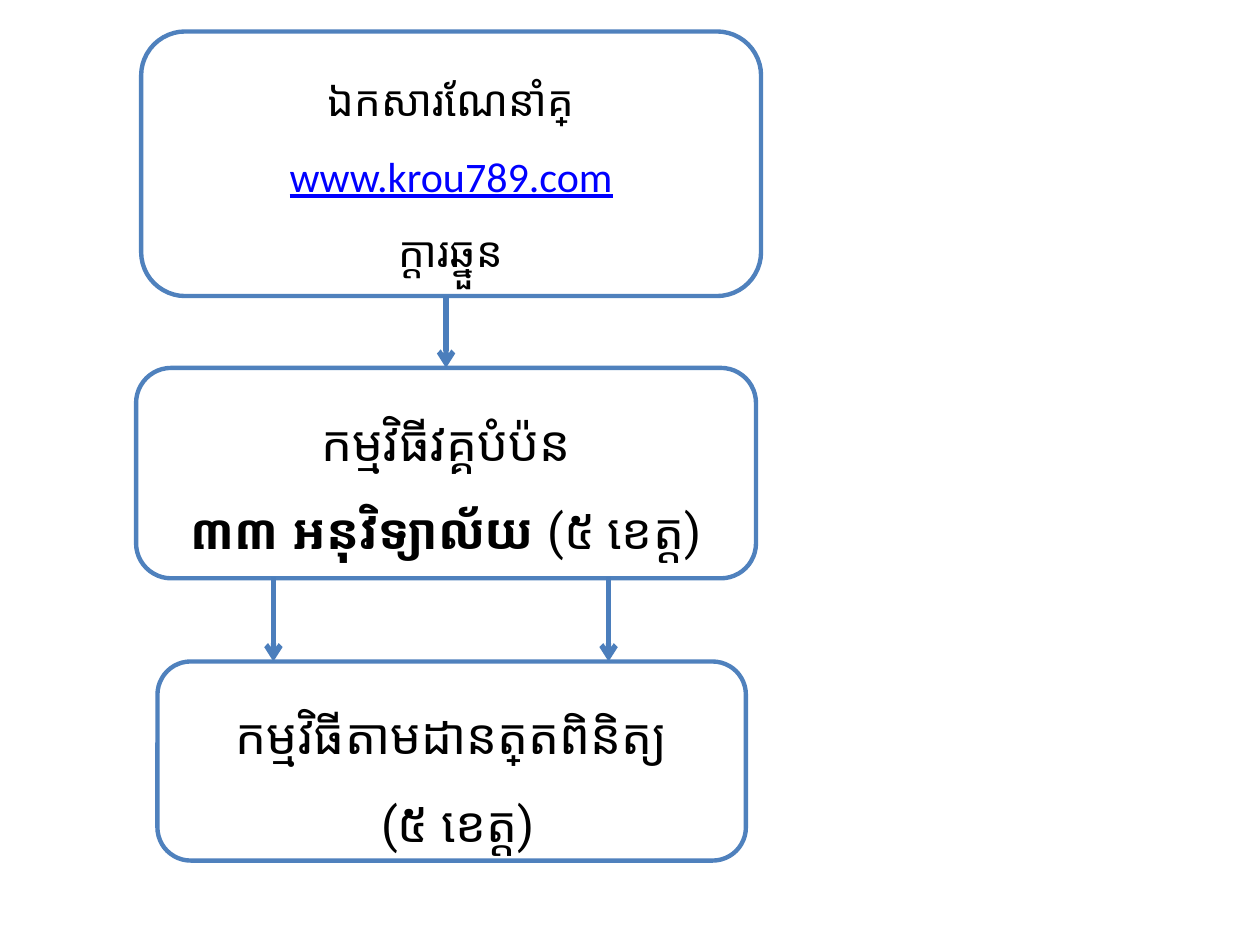
from dataclasses import dataclass

from lxml import etree
from pptx import Presentation
from pptx.dml.color import RGBColor
from pptx.enum.shapes import MSO_CONNECTOR, MSO_SHAPE
from pptx.enum.text import MSO_ANCHOR, PP_ALIGN
from pptx.oxml.ns import qn
from pptx.slide import Slide
from pptx.util import Inches, Pt

WHITE = RGBColor(0xFF, 0xFF, 0xFF)
BLACK = RGBColor(0x00, 0x00, 0x00)
BORDER_BLUE = RGBColor(0x4F, 0x81, 0xBD)
ARROW_BLUE = RGBColor(0x4B, 0x7E, 0xBC)
LINK_BLUE = RGBColor(0x00, 0x00, 0xFF)

BOLD = "bold"
LINK = "link"


@dataclass
class Flowchart:
    slide: Slide
    border_width: float = 2.5
    arrow_width: float = 3
    inset: float = 0.04
    line_spacing: float = 1.5

    def step(self, left, top, width, height, font_name, size, lines):
        """Draw a rounded box; each line is a list of (text, emphasis) runs."""
        box = self.slide.shapes.add_shape(
            MSO_SHAPE.FLOWCHART_ALTERNATE_PROCESS,
            Inches(left), Inches(top), Inches(width), Inches(height))
        box.shadow.inherit = False
        box.fill.solid()
        box.fill.fore_color.rgb = WHITE
        box.line.color.rgb = BORDER_BLUE
        box.line.width = Pt(self.border_width)

        frame = box.text_frame
        frame.word_wrap = True
        frame.vertical_anchor = MSO_ANCHOR.TOP
        frame.margin_left = frame.margin_right = Inches(self.inset)
        frame.margin_top = frame.margin_bottom = Inches(self.inset)
        for index, line in enumerate(lines):
            paragraph = frame.add_paragraph() if index else frame.paragraphs[0]
            paragraph.alignment = PP_ALIGN.CENTER
            paragraph.line_spacing = self.line_spacing
            for text, emphasis in line:
                run = paragraph.add_run()
                run.text = text
                run.font.name = font_name
                run.font.size = Pt(size)
                run.font.bold = emphasis == BOLD
                run.font.underline = emphasis == LINK
                run.font.color.rgb = LINK_BLUE if emphasis == LINK else BLACK

    def down_arrow(self, x, top, bottom):
        arrow = self.slide.shapes.add_connector(
            MSO_CONNECTOR.STRAIGHT,
            Inches(x), Inches(top), Inches(x), Inches(bottom))
        arrow.line.color.rgb = ARROW_BLUE
        arrow.line.width = Pt(self.arrow_width)
        etree.SubElement(arrow.line._get_or_add_ln(), qn("a:tailEnd"), type="arrow")
        etree.SubElement(arrow._element.spPr, qn("a:effectLst"))


def main():
    deck = Presentation()
    deck.slide_width, deck.slide_height = Inches(10), Inches(7.5)
    chart = Flowchart(deck.slides.add_slide(deck.slide_layouts[6]))

    provinces = ("(៥ ខេត្ត)", None)
    chart.step(1.08, 2.92, 4.92, 1.67, "Roboto", 28, [
        [("កម្មវិធីវគ្គបំប៉ន", None)],
        [("៣៣ អនុវិទ្យាល័យ ", BOLD), provinces],
    ])
    chart.step(1.12, 0.25, 4.92, 2.1, "Calibri", 24, [
        [("ឯកសារណែនាំគ្រូ", None)],
        [("www.krou789.com", LINK)],
        [("ក្ដារឆ្នួន", None)],
    ])
    chart.down_arrow(3.54, 2.35, 2.92)
    for x in (2.17, 4.83):
        chart.down_arrow(x, 4.58, 5.25)
    chart.step(1.25, 5.25, 4.67, 1.58, "Roboto", 28, [
        [("កម្មវិធីតាមដានត្រួតពិនិត្យ", None)],
        [(" ", BOLD), provinces],
    ])

    deck.save("out.pptx")


if __name__ == "__main__":
    main()
